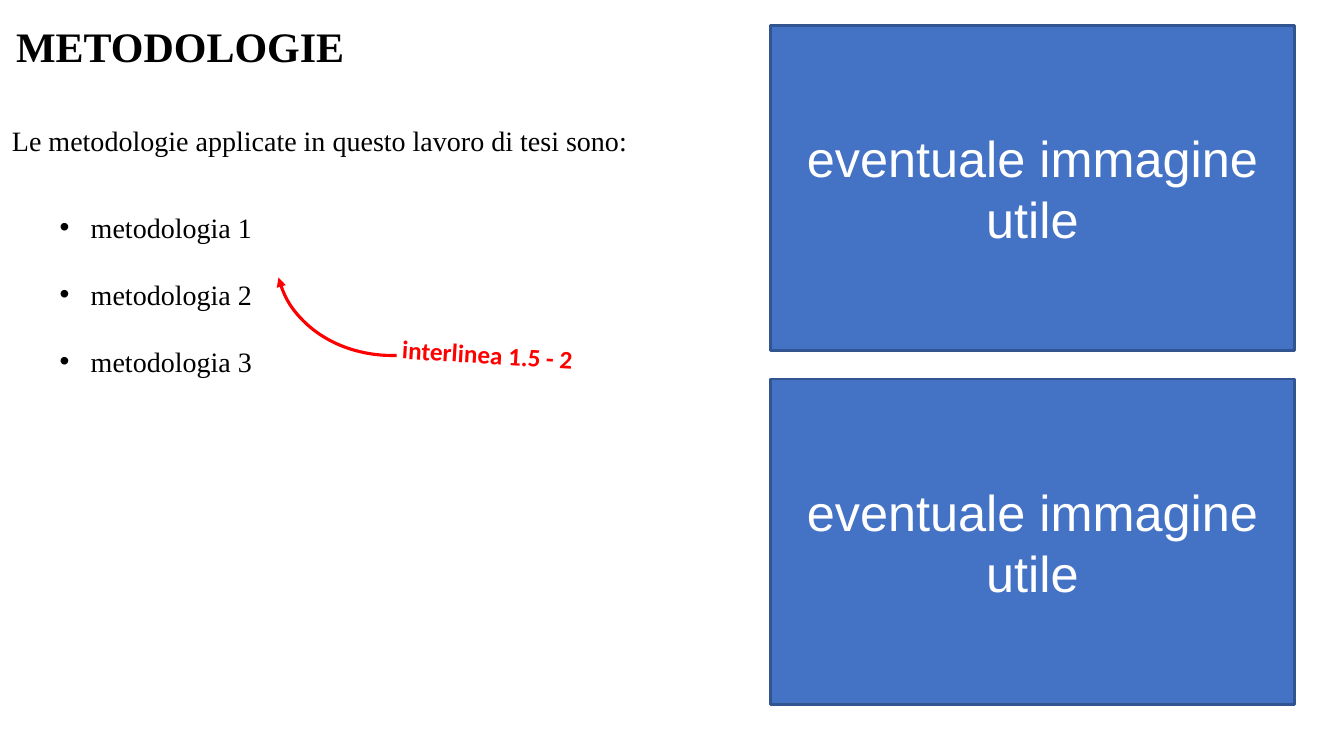
import pptx
import pptx.dml.color
import pptx.enum.shapes
import pptx.enum.text
import pptx.oxml
import pptx.oxml.ns
import pptx.util

Inches = pptx.util.Inches
Pt = pptx.util.Pt
Align = pptx.enum.text.PP_ALIGN
Anchor = pptx.enum.text.MSO_ANCHOR
Shape = pptx.enum.shapes.MSO_SHAPE
SERIF = "Times New Roman"


class Deck:
    """Hold the style and the current slide, and add each kind of element."""

    hues = {"ink": "000000", "note": "FF0000", "fill": "4472C4",
            "edge": "325491", "light": "FFFFFF"}

    def __init__(self, prs):
        self.slide = prs.slides.add_slide(prs.slide_layouts[1])

    def hue(self, name):
        return pptx.dml.color.RGBColor.from_string(self.hues[name])

    def place(self, item, box):
        item.left, item.top, item.width, item.height = map(Inches, box)

    def label(self, item, lines, size, face=SERIF, hue="ink", bold=False,
              align=Align.LEFT, anchor=Anchor.TOP, space=1.0):
        frame = item.text_frame
        frame.text = "\n".join(lines)
        frame.word_wrap = True
        frame.auto_size = pptx.enum.text.MSO_AUTO_SIZE.NONE
        frame.vertical_anchor = anchor
        for para in frame.paragraphs:
            para.alignment = align
            para.line_spacing = space
            para.space_before = Pt(0)
            font = para.font
            font.name, font.size, font.bold = face, Pt(size), bold
            font.color.rgb = self.hue(hue)

    def title(self, box, text):
        item = self.slide.shapes.title
        self.place(item, box)
        self.label(item, [text], 30, bold=True)

    def list(self, box, lines):
        item = self.slide.placeholders[1]
        self.place(item, box)
        self.label(item, lines, 20, align=Align.JUSTIFY, space=2.0)
        for para in item.text_frame.paragraphs:
            props = para._p.get_or_add_pPr()
            props.set("marL", str(Inches(0.31)))
            props.set("indent", str(Inches(-0.33)))

    def text(self, box, text, size, turn=0, **style):
        item = self.slide.shapes.add_textbox(*map(Inches, box))
        item.rotation = turn
        self.label(item, [text], size, **style)

    def shape(self, kind, box, edge, width):
        item = self.slide.shapes.add_shape(kind, *map(Inches, box))
        item.shadow.inherit = False
        item.line.color.rgb = self.hue(edge)
        item.line.width = Pt(width)
        return item

    def arc(self, box, turn, start, end):
        item = self.shape(Shape.ARC, box, "note", 2.25)
        item.fill.background()
        item.rotation = turn
        item.adjustments[0], item.adjustments[1] = start, end
        space = pptx.oxml.ns.nsdecls("a")
        head = pptx.oxml.parse_xml(f'<a:tailEnd {space} type="triangle"/>')
        item._element.spPr.get_or_add_ln().append(head)

    def panel(self, box, text):
        item = self.shape(Shape.RECTANGLE, box, "edge", 2)
        item.fill.solid()
        item.fill.fore_color.rgb = self.hue("fill")
        self.label(item, [text], 36, face="Arial", hue="light",
                   align=Align.CENTER, anchor=Anchor.MIDDLE)


def main():
    prs = pptx.Presentation()
    prs.slide_width, prs.slide_height = Inches(13.33), Inches(7.5)
    deck = Deck(prs)
    deck.title((0.06, 0.15, 6.41, 0.61), "METODOLOGIE")
    deck.text((0.02, 0.84, 6.53, 0.77),
              "Le metodologie applicate in questo lavoro di tesi sono:", 20,
              align=Align.JUSTIFY, space=2.0)
    deck.list((0.49, 1.7, 5.59, 2.12),
              [f"metodologia {num}" for num in range(1, 4)])
    deck.text((3.89, 3.33, 2.42, 0.4), "interlinea 1.5 - 2", 18, turn=3.5,
              face="Calibri", hue="note", bold=True)
    deck.arc((2.73, 1.43, 2.48, 2.09), 169.7, 169.37, 214.42)
    for top in (0.25, 3.76):
        deck.panel((7.64, top, 5.2, 3.23), "eventuale immagine utile")
    prs.save("out.pptx")


if __name__ == "__main__":
    main()
